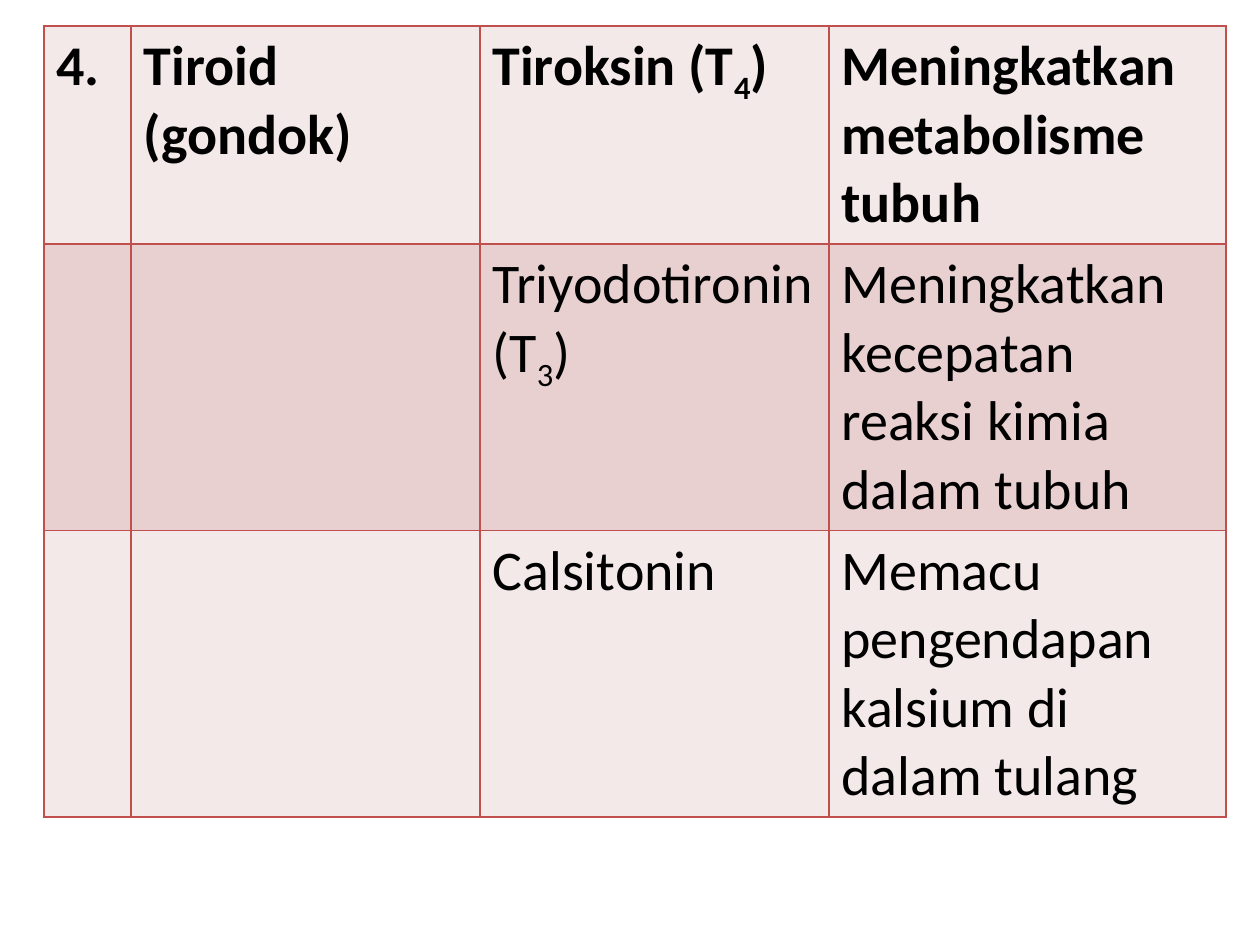
from dataclasses import dataclass

from lxml import etree
from pptx import Presentation
from pptx.dml.color import RGBColor
from pptx.oxml.ns import qn
from pptx.util import Emu, Pt

PX = 914400 // 126
BLANK_LAYOUT = 6
BORDER_TAGS = ("a:lnL", "a:lnR", "a:lnT", "a:lnB")


@dataclass(frozen=True)
class Theme:
    font: str = "Calibri"
    size: int = 32
    text: str = "000000"
    border: str = "C0504D"
    border_width: int = 1
    bands: tuple = ("F4E9E9", "E8D0D0")
    subscript: str = "-25000"


THEME = Theme()
COLUMN_WIDTHS = (87, 349, 349, 397)
ROW_HEIGHTS = (218, 286, 286)

# Each cell is a sequence of runs; every second run is a subscript.
HORMONE_ROWS = (
    (("4.",), ("Tiroid (gondok)",), ("Tiroksin (T", "4", ")"),
     ("Meningkatkan metabolisme tubuh",)),
    ((), (), ("Triyodotironin (T", "3", ")"),
     ("Meningkatkan kecepatan reaksi kimia dalam tubuh",)),
    ((), (), ("Calsitonin",),
     ("Memacu pengendapan kalsium di dalam tulang",)),
)


def px(length):
    return Emu(length * PX)


def add_borders(cell):
    """Line all four sides; call before the fill, which must follow the lines."""
    properties = cell._tc.get_or_add_tcPr()
    for tag in BORDER_TAGS:
        line = etree.SubElement(properties, qn(tag), w=str(Pt(THEME.border_width)))
        fill = etree.SubElement(line, qn("a:solidFill"))
        etree.SubElement(fill, qn("a:srgbClr"), val=THEME.border)


def write_runs(paragraph, texts, bold):
    for index, text in enumerate(texts):
        run = paragraph.add_run()
        run.text = text
        run.font.name = THEME.font
        run.font.size = Pt(THEME.size)
        run.font.bold = bold
        run.font.color.rgb = RGBColor.from_string(THEME.text)
        if index % 2:
            run.font._element.set("baseline", THEME.subscript)


def add_hormone_table(slide, left, top):
    frame = slide.shapes.add_table(
        len(HORMONE_ROWS), len(COLUMN_WIDTHS), px(left), px(top),
        px(sum(COLUMN_WIDTHS)), px(sum(ROW_HEIGHTS)))
    table = frame.table
    for column, width in zip(table.columns, COLUMN_WIDTHS):
        column.width = px(width)
    for row_index, (row, height) in enumerate(zip(table.rows, ROW_HEIGHTS)):
        row.height = px(height)
        band = RGBColor.from_string(THEME.bands[row_index % 2])
        for cell, texts in zip(row.cells, HORMONE_ROWS[row_index]):
            add_borders(cell)
            cell.fill.solid()
            cell.fill.fore_color.rgb = band
            write_runs(cell.text_frame.paragraphs[0], texts, bold=row_index == 0)


def main():
    presentation = Presentation()
    presentation.slide_width = px(1260)
    presentation.slide_height = px(945)
    slide = presentation.slides.add_slide(presentation.slide_layouts[BLANK_LAYOUT])
    add_hormone_table(slide, left=44, top=26)
    presentation.save("out.pptx")


if __name__ == "__main__":
    main()
